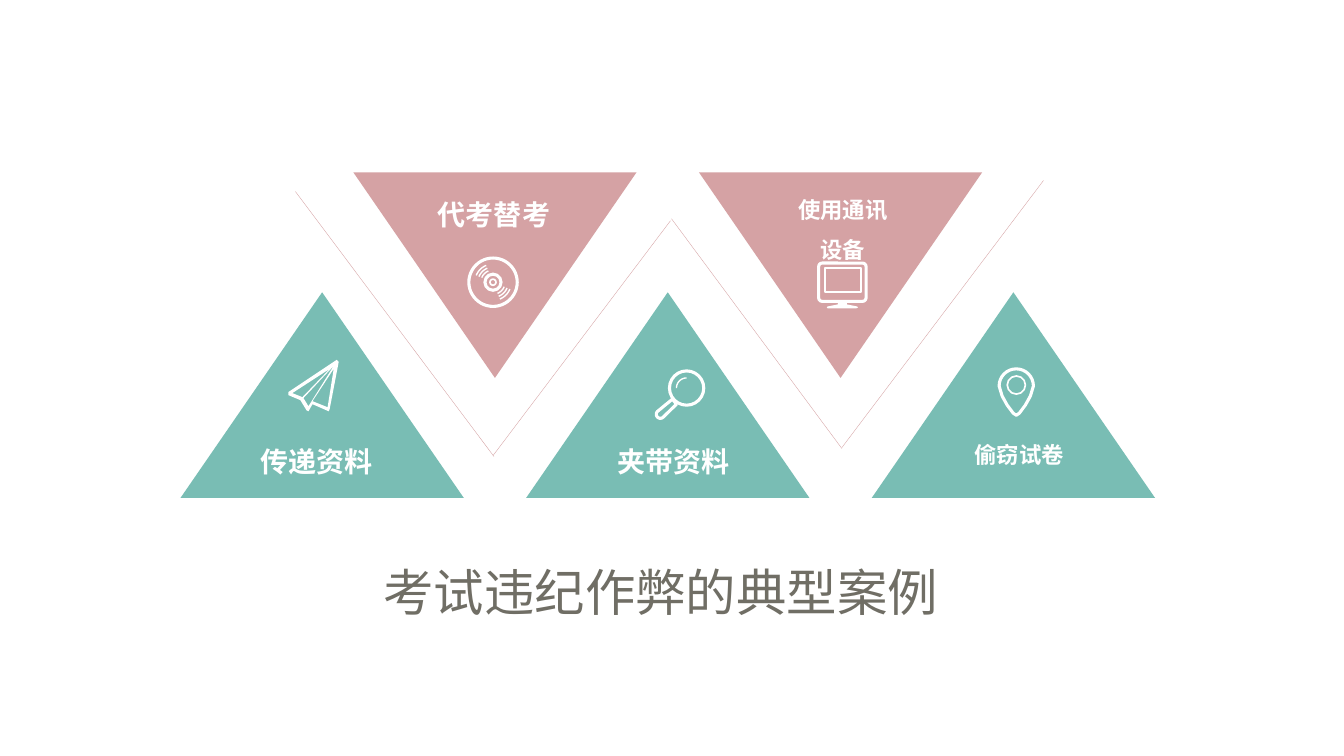
from math import cos, radians, sin

from lxml import etree
from pptx import Presentation
from pptx.dml.color import RGBColor
from pptx.enum.shapes import MSO_CONNECTOR, MSO_SHAPE
from pptx.enum.text import MSO_AUTO_SIZE, PP_ALIGN
from pptx.oxml.ns import qn
from pptx.util import Inches, Pt

STRAIGHT = MSO_CONNECTOR.STRAIGHT
TRIANGLE = MSO_SHAPE.ISOSCELES_TRIANGLE
OVAL = MSO_SHAPE.OVAL
RECTANGLE = MSO_SHAPE.RECTANGLE
ROUNDED = MSO_SHAPE.ROUNDED_RECTANGLE
CENTER = PP_ALIGN.CENTER
GROW = MSO_AUTO_SIZE.SHAPE_TO_FIT_TEXT

FONT = "Noto Sans CJK SC"
COLORS = {"teal": "79BDB4", "rose": "D5A2A4", "white": "FFFFFF", "title": "706E65"}


def color(name):
    return RGBColor.from_string(COLORS[name])


def paint(shape, fill=None, line_width=None):
    shape.shadow.inherit = False
    if fill:
        shape.fill.solid()
        shape.fill.fore_color.rgb = color(fill)
    else:
        shape.fill.background()
    if line_width:
        shape.line.color.rgb = color("white")
        shape.line.width = Pt(line_width)
    else:
        shape.line.fill.background()


def add_preset(slide, kind, left, top, width, height, **look):
    shape = slide.shapes.add_shape(
        kind, Inches(left), Inches(top), Inches(width), Inches(height))
    paint(shape, **look)
    return shape


def add_ring(slide, center, radius, line_width):
    x, y = center
    add_preset(slide, OVAL, x - radius, y - radius, 2 * radius, 2 * radius,
               line_width=line_width)


def add_outline(slide, contours, close=True, **look):
    paths = [[(Inches(x), Inches(y)) for x, y in contour] for contour in contours]
    builder = slide.shapes.build_freeform(*paths[0][0])
    builder.add_line_segments(paths[0][1:], close=close)
    for path in paths[1:]:
        builder.move_to(*path[0])
        builder.add_line_segments(path[1:], close=close)
    paint(builder.convert_to_shape(), **look)


def arc(center, radius, start, end, steps=16):
    angles = [radians(start + (end - start) * i / steps) for i in range(steps + 1)]
    return [(center[0] + radius * cos(a), center[1] + radius * sin(a)) for a in angles]


def add_triangle(slide, left, top, fill, flipped):
    shape = add_preset(slide, TRIANGLE, left, top, 2.81, 2.04, fill=fill)
    if flipped:
        shape._element.spPr.xfrm.set("flipV", "1")


def add_line(slide, start, end):
    line = slide.shapes.add_connector(
        STRAIGHT, *[Inches(value) for value in (*start, *end)])
    line.line.color.rgb = color("rose")
    line.line.width = Pt(0.25)
    etree.SubElement(line._element.spPr, qn("a:effectLst"))


def add_text(slide, text, left, top, width, height, size=20, fill="white",
             bold=True, spacing=1.5):
    box = slide.shapes.add_textbox(
        Inches(left), Inches(top), Inches(width), Inches(height))
    frame = box.text_frame
    frame.word_wrap = True
    frame.auto_size = GROW
    frame.text = text
    for paragraph in frame.paragraphs:
        paragraph.alignment = CENTER
        paragraph.line_spacing = spacing
        font = paragraph.runs[0].font
        font.name = FONT
        font.size = Pt(size)
        font.bold = bold
        font.color.rgb = color(fill)
        east_asian = etree.SubElement(font._element, qn("a:ea"))
        east_asian.set("typeface", FONT)


def add_paper_plane(slide):
    add_outline(slide, [
        [(3.34, 3.57), (2.86, 3.89), (2.86, 3.92), (2.98, 3.97), (3.04, 4.07),
         (3.06, 4.08), (3.1, 4.01), (3.26, 4.08), (3.27, 4.06), (3.36, 3.59)],
        [(2.9, 3.9), (3.27, 3.66), (3, 3.94)],
        [(3.01, 3.95), (3.31, 3.63), (3.06, 4.03)],
        [(3.25, 4.04), (3.1, 3.98), (3.31, 3.66)],
    ], fill="white")


def add_magnifier(slide):
    lens = (6.81, 3.85)
    add_ring(slide, lens, 0.17, 2.2)
    add_outline(slide, [arc(lens, 0.1, 180, 270)], close=False, line_width=1)
    tip = arc((6.55, 4.11), 0.04, 45, 225)
    add_outline(slide, [[(6.67, 3.96), (6.71, 4.01), *tip]], line_width=2.2)


def add_map_pin(slide):
    head = (10.08, 3.83)
    left_side = [(9.94, 3.93), (9.99, 4.02), (10.05, 4.1)]
    right_side = [(2 * head[0] - x, y) for x, y in left_side]
    add_outline(slide, [[*arc(head, 0.17, 180, 360), *right_side, (10.08, 4.12),
                         *reversed(left_side)]], line_width=2.2)
    add_ring(slide, (10.08, 3.82), 0.09, 1.2)


def add_disc(slide):
    center = (4.89, 2.8)
    for radius, line_width in ((0.24, 2.2), (0.08, 2.2), (0.03, 1.2)):
        add_ring(slide, center, radius, line_width)
    for radius in (0.12, 0.15, 0.18):
        for start in (22, 202):
            add_outline(slide, [arc(center, radius, start, start + 46)],
                        close=False, line_width=1)


def add_monitor(slide):
    case = add_preset(slide, ROUNDED, 8.12, 2.61, 0.47, 0.38, line_width=2.2)
    case.adjustments[0] = 0.09
    add_preset(slide, RECTANGLE, 8.18, 2.66, 0.36, 0.24, line_width=1.2)
    add_outline(slide, [[(8.31, 2.99), (8.4, 2.99), (8.4, 3.02), (8.5, 3.04),
                         (8.51, 3.05), (8.49, 3.06), (8.21, 3.06), (8.2, 3.05),
                         (8.21, 3.04), (8.31, 3.02)]], fill="white")


def main():
    presentation = Presentation()
    presentation.slide_width = Inches(13.33)
    presentation.slide_height = Inches(7.5)
    slide = presentation.slides.add_slide(presentation.slide_layouts[6])

    for index in range(5):
        flipped = index % 2 == 1
        add_triangle(slide, 1.79 + index * 1.714, 1.71 if flipped else 2.9,
                     "rose" if flipped else "teal", flipped)

    for start, end in (((2.93, 1.9), (4.9, 4.53)), ((6.66, 2.17), (8.35, 4.45)),
                       ((6.65, 2.19), (4.89, 4.52)), ((10.35, 1.79), (8.35, 4.44))):
        add_line(slide, start, end)

    for text, left, top, height, size in (
            ("代考替考", 4.2, 1.74, 0.55, 20),
            ("使用通讯\n设备", 7.66, 1.76, 0.86, 16),
            ("传递资料", 2.44, 4.19, 0.55, 20),
            ("夹带资料", 5.98, 4.19, 0.55, 20),
            ("偷窃试卷", 9.41, 4.19, 0.46, 16)):
        add_text(slide, text, left, top, 1.4, height, size=size)

    for add_icon in (add_paper_plane, add_magnifier, add_map_pin, add_disc, add_monitor):
        add_icon(slide)

    add_text(slide, "考试违纪作弊的典型案例 ", 1.11, 5.52, 11, 1.31, size=36,
             fill="title", bold=False, spacing=1.0)
    presentation.save("out.pptx")


if __name__ == "__main__":
    main()
